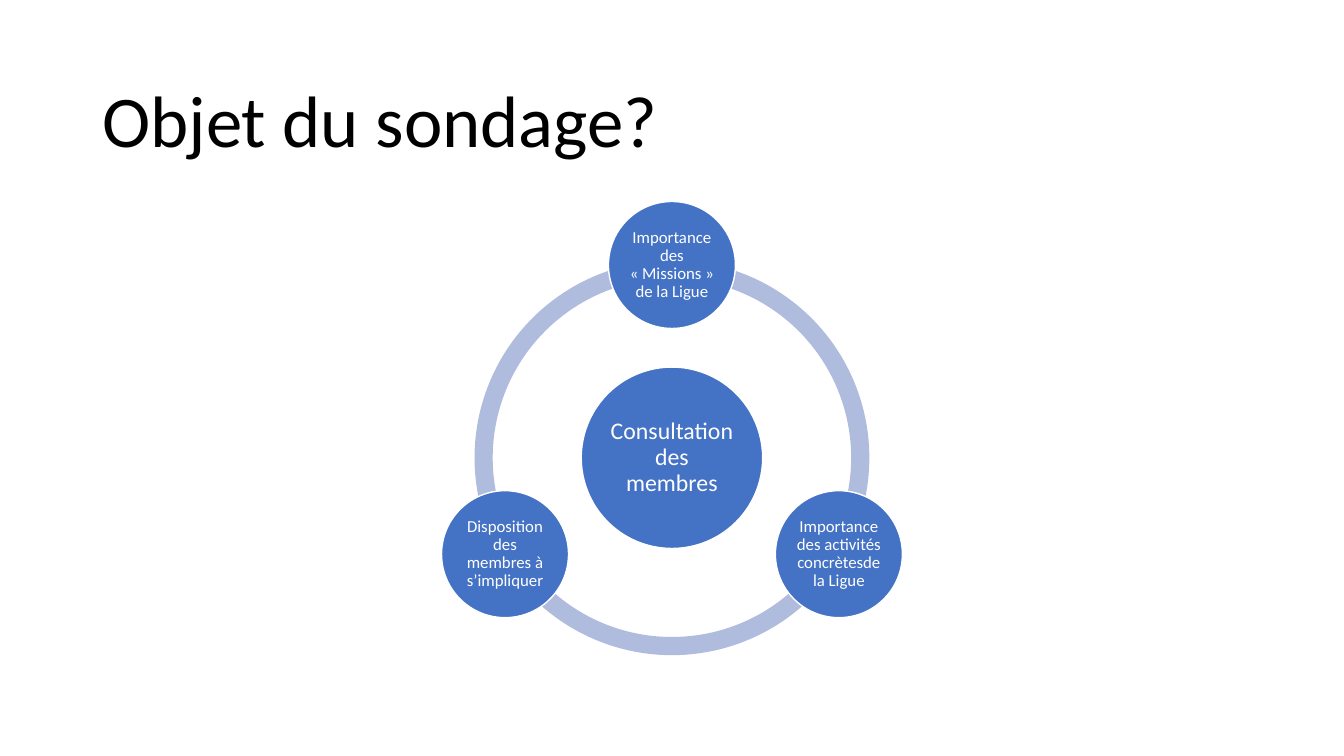
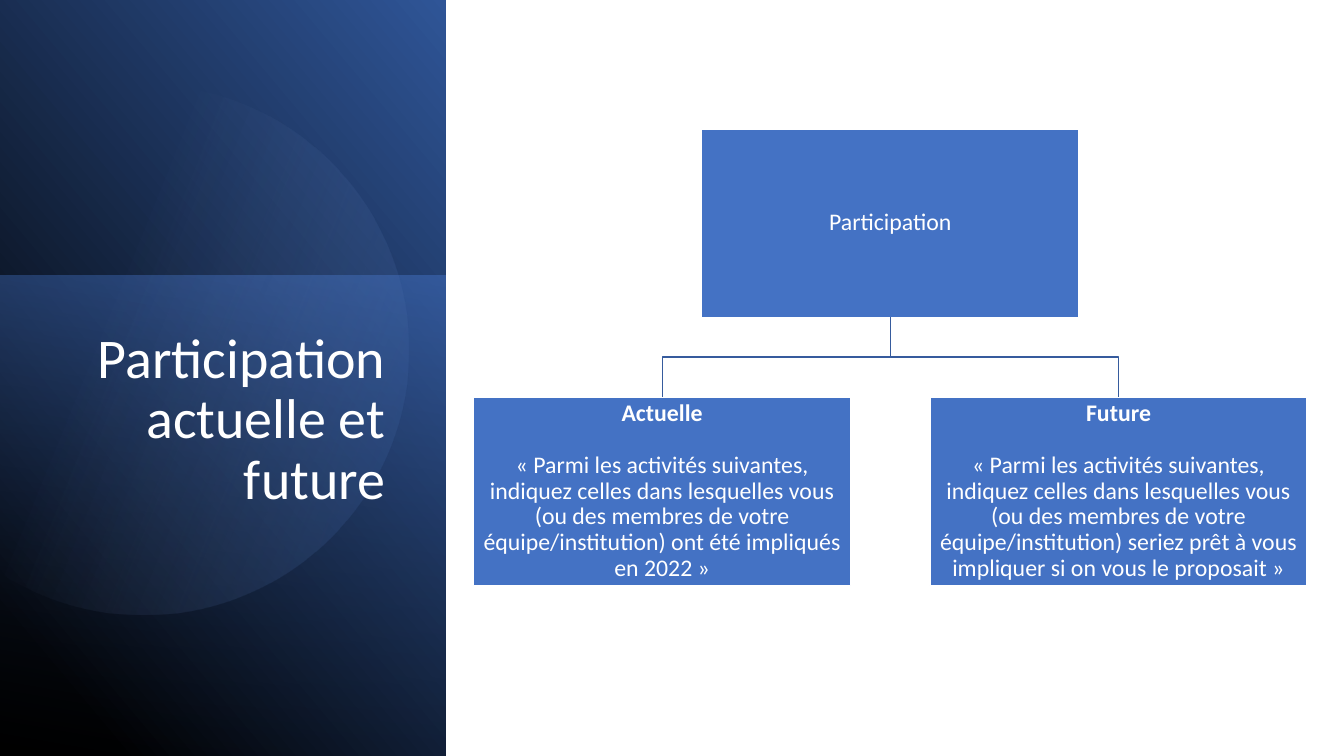
import math
from lxml import etree
from pptx import Presentation
from pptx.dml import color
from pptx.enum import shapes, text
from pptx.oxml import ns
from pptx.util import Pt

FONT = "Calibri"
NBSP = chr(160)
BLUE, RING, LINE, WHITE, BLACK = "4472C4", "B0BCDE", "365B9D", "FFFFFF", "000000"
LEFT, CENTER, RIGHT = text.PP_ALIGN.LEFT, text.PP_ALIGN.CENTER, text.PP_ALIGN.RIGHT
TOP, MIDDLE = text.MSO_ANCHOR.TOP, text.MSO_ANCHOR.MIDDLE
OVAL, DONUT, RECT = (shapes.MSO_SHAPE.OVAL, shapes.MSO_SHAPE.DONUT,
                     shapes.MSO_SHAPE.RECTANGLE)


def rgb(value):
    return color.RGBColor.from_string(value)


def quote(content):
    return f"«{NBSP}{content}{NBSP}»"


def write(p, content, size=17, fill=WHITE, bold=False, align=CENTER, after=0):
    p.alignment = align
    p.line_spacing = 0.9
    p.space_before = Pt(0)
    p.space_after = Pt(after)
    r = p.add_run()
    r.text = content
    r.font.name = FONT
    r.font.size = Pt(size)
    r.font.bold = bold
    r.font.color.rgb = rgb(fill)


class Deck:
    def __init__(self):
        self.prs = Presentation()
        self.prs.slide_width = Pt(960)
        self.prs.slide_height = Pt(540)
        self.slide = None

    def new_slide(self):
        self.slide = self.prs.slides.add_slide(self.prs.slide_layouts[5])

    def title(self, content, box, anchor=MIDDLE, **fmt):
        sp = self.slide.shapes.title
        sp.left, sp.top, sp.width, sp.height = map(Pt, box)
        tf = sp.text_frame
        tf.word_wrap = True
        tf.auto_size = text.MSO_AUTO_SIZE.NONE
        tf.vertical_anchor = anchor
        write(tf.paragraphs[0], content, **fmt)
        self.slide.shapes._spTree.append(sp._element)

    def shape(self, kind, box, fill=BLUE, line=None):
        sp = self.slide.shapes.add_shape(kind, *map(Pt, box))
        sp.shadow.inherit = False
        sp.fill.solid()
        sp.fill.fore_color.rgb = rgb(fill)
        if line:
            sp.line.color.rgb = rgb(line)
            sp.line.width = Pt(1)
        else:
            sp.line.fill.background()
        return sp

    def node(self, kind, cx, cy, width, height, content, size=17, heading=None):
        box = (cx - width / 2, cy - height / 2, width, height)
        sp = self.shape(kind, box, line=WHITE)
        tf = sp.text_frame
        tf.word_wrap = True
        tf.vertical_anchor = MIDDLE
        tf.margin_left = tf.margin_right = tf.margin_top = tf.margin_bottom = Pt(1)
        p = tf.paragraphs[0]
        if heading:
            write(p, heading, size=size, bold=True, after=18.6)
            p = tf.add_paragraph()
        write(p, content, size=size)
        return sp

    def gradient(self, sp, angle, *stops):
        sp.fill.gradient()
        sp.fill.gradient_angle = -angle % 360
        for stop, (position, value, opacity) in zip(sp.fill.gradient_stops, stops):
            stop.position = position
            stop.color.rgb = rgb(value)
        colours = sp._element.spPr.iterfind(".//" + ns.qn("a:gs") + "/" + ns.qn("a:srgbClr"))
        for clr, (position, value, opacity) in zip(colours, stops):
            if opacity < 1:
                alpha = etree.SubElement(clr, ns.qn("a:alpha"))
                alpha.set("val", str(round(opacity * 100000)))

    def disc(self, cx, cy, radius):
        limit = math.degrees(math.acos(-cx / radius))
        points = [(Pt(cx + radius * math.cos(a)), Pt(cy + radius * math.sin(a)))
                  for a in map(math.radians, (-limit, -90, 0, 90, limit))]
        builder = self.slide.shapes.build_freeform(*points[0])
        builder.add_line_segments(points[1:], close=True)
        sp = builder.convert_to_shape()
        sp.shadow.inherit = False
        sp.line.fill.background()
        first, *others = list(sp._element.spPr.iter(ns.qn("a:lnTo")))
        arc = etree.Element(ns.qn("a:arcTo"))
        arc.set("wR", str(Pt(radius)))
        arc.set("hR", str(Pt(radius)))
        arc.set("stAng", str(round((360 - limit) * 60000)))
        arc.set("swAng", str(round(2 * limit * 60000)))
        first.addprevious(arc)
        for segment in (first, *others):
            segment.getparent().remove(segment)
        return sp

    def elbow(self, parent, child):
        cn = self.slide.shapes.add_connector(shapes.MSO_CONNECTOR.ELBOW, 0, 0, 0, 0)
        cn.line.color.rgb = rgb(LINE)
        cn.line.width = Pt(1)
        etree.SubElement(cn._element.spPr, ns.qn("a:effectLst"))
        cn.begin_connect(parent, 2)
        cn.end_connect(child, 0)
        x1, y1, x2, y2 = cn.begin_x, cn.begin_y, cn.end_x, cn.end_y
        cn.width, cn.height = y2 - y1, abs(x2 - x1)
        cn.left = (x1 + x2 - cn.width) // 2
        cn.top = (y1 + y2 - cn.height) // 2
        to_right = x2 > x1
        xfrm = cn._element.spPr.find(ns.qn("a:xfrm"))
        xfrm.set("rot", str((270 if to_right else 90) * 60000))
        xfrm.set("flipH", "1" if to_right else "0")
        xfrm.set("flipV", "0")


def survey_slide(deck):
    deck.new_slide()
    deck.title("Objet du sondage?", (66, 44, 828, 89.5), size=52, fill=BLACK, align=LEFT)
    cx, cy, ring, orbit = 480, 327, 282, 137.7
    sp = deck.shape(DONUT, (cx - ring / 2, cy - ring / 2, ring, ring), RING)
    sp.adjustments[0] = 0.046
    deck.node(OVAL, cx, cy, 129.6, 129.6, "Consultation des membres")
    topics = (f"Importance des {quote('Missions')} de la Ligue",
              "Importance des activités concrètesde la Ligue",
              "Disposition des membres à s’impliquer")
    for i, topic in enumerate(topics):
        angle = math.radians(120 * i - 90)
        deck.node(OVAL, cx + orbit * math.cos(angle), cy + orbit * math.sin(angle),
                  90.7, 90.7, topic, size=12)


def participation_slide(deck):
    deck.new_slide()
    panel = 318.4
    sp = deck.shape(RECT, (0, 0, panel, 540))
    deck.gradient(sp, 320, (0.11, BLACK, 1), (1, "2F5597", 1))
    sp = deck.shape(RECT, (0, 196.8, panel, 343.2))
    deck.gradient(sp, 100, (0, BLUE, 0.5), (1, "203864", 0))
    sp = deck.disc(102.6, 250, 189.2)
    deck.gradient(sp, 22, (0.32, "8FAADC", 0), (1, "2F5597", 0.26))
    deck.title("Participation actuelle et future", (41.8, 232.2, 240.5, 278),
               anchor=TOP, size=40, align=RIGHT)

    cx, offset, width, height = 636, 163, 269.4, 134.6
    parent = deck.node(RECT, cx, 159.4, width, height, "Participation")
    question = ("Parmi les activités suivantes, indiquez celles dans lesquelles vous "
                "(ou des membres de votre équipe/institution) ")
    branches = (("Actuelle", "ont été impliqués en 2022", -offset),
                ("Future", "seriez prêt à vous impliquer si on vous le proposait", offset))
    for heading, ending, shift in branches:
        child = deck.node(RECT, cx + shift, 350.9, width, height,
                          quote(question + ending), heading=heading)
        deck.elbow(parent, child)


def main():
    deck = Deck()
    survey_slide(deck)
    participation_slide(deck)
    deck.prs.save("out.pptx")


if __name__ == "__main__":
    main()
